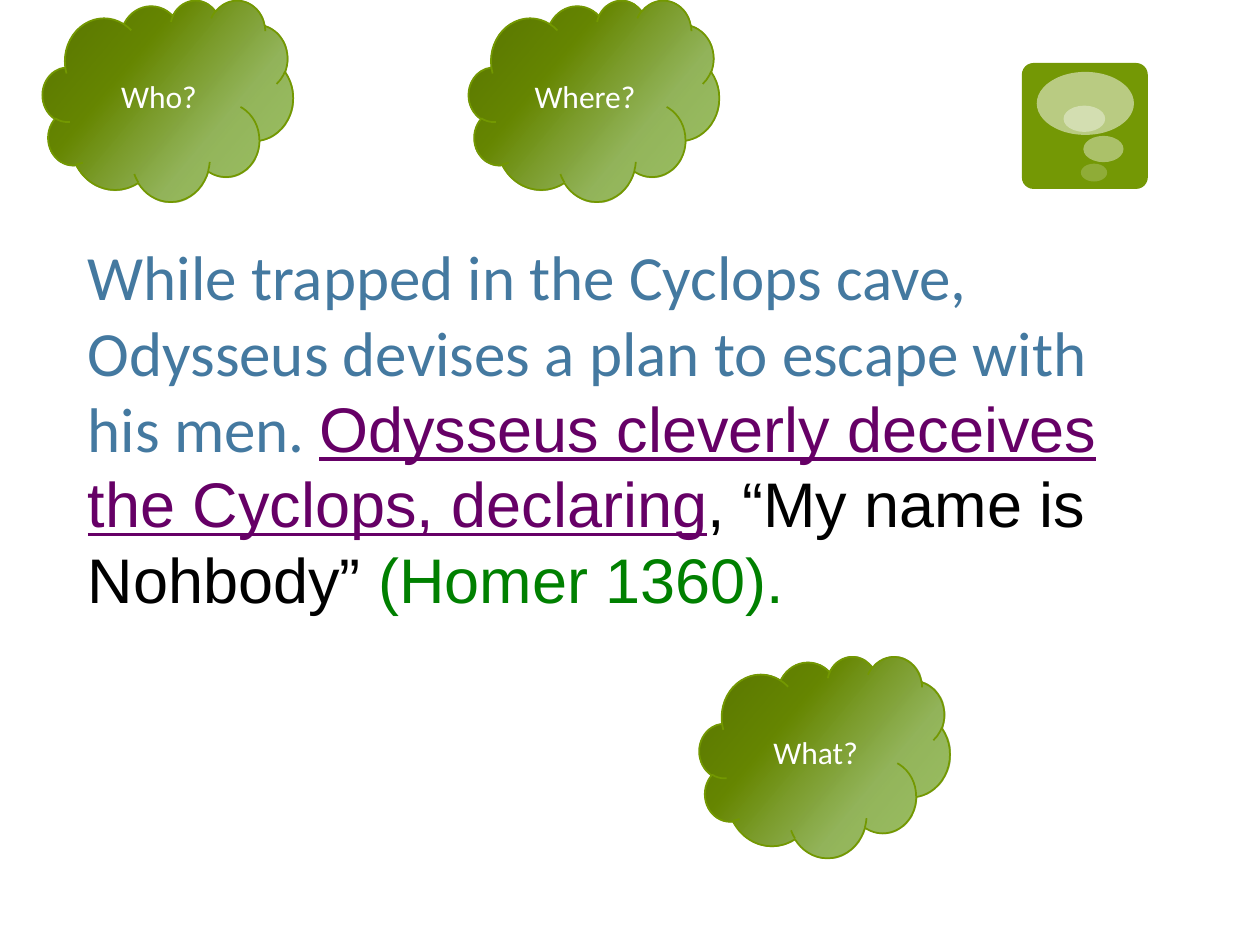
from lxml import etree
from pptx import Presentation
from pptx.dml.color import RGBColor
from pptx.enum.shapes import MSO_SHAPE
from pptx.enum.text import MSO_ANCHOR, PP_ALIGN
from pptx.oxml.ns import qn
from pptx.util import Cm, Pt

CLOUD = MSO_SHAPE.CLOUD
OVAL = MSO_SHAPE.OVAL
ROUNDED = MSO_SHAPE.ROUNDED_RECTANGLE
MIDDLE = MSO_ANCHOR.MIDDLE
CENTER = PP_ALIGN.CENTER

WHITE = RGBColor(0xFF, 0xFF, 0xFF)
BLACK = RGBColor(0, 0, 0)
BLUE = RGBColor(0x44, 0x79, 0xA0)
PURPLE = RGBColor(0x66, 0, 0x66)
GREEN = RGBColor(0, 0x80, 0)
ICON_GREEN = RGBColor(0x74, 0x98, 0x05)
CLOUD_EDGE = RGBColor(0x73, 0x98, 0x01)

# Gradient stops: position, colour, opacity (all in percent)
CLOUD_STOPS = [
    (0, RGBColor(0x8F, 0xB8, 0x4C), 85),
    (33, RGBColor(0x8E, 0xB1, 0x53), 95),
    (67, RGBColor(0x66, 0x86, 0), 100),
    (100, RGBColor(0x58, 0x74, 0), 100),
]

# Icon bubbles: left, top, width, height in cm, opacity in percent
BUBBLES = [
    (20.9, 1.45, 1.96, 1.27, 50),
    (21.84, 2.74, 0.81, 0.53, 40),
    (21.79, 3.3, 0.53, 0.36, 20),
    (21.44, 2.13, 0.84, 0.53, 38),
]

# Clouds: left, top in cm, label
CLOUDS = [(0.86, 0, "Who?"), (9.45, 0, "Where?"), (14.1, 13.23, "What?")]

SENTENCE = [
    ("While trapped in the Cyclops cave, Odysseus devises a plan to escape "
     "with his men. ", dict(name="Calibri"), BLUE),
    ("Odysseus cleverly deceives the Cyclops, declaring",
     dict(name="Arial", underline=True), PURPLE),
    (", “My name is Nohbody” ", dict(name="Arial"), BLACK),
    ("(Homer 1360).", dict(name="Arial"), GREEN),
]


def set_opacity(parent, percent):
    """Add an opacity to the colour inside a solid fill or gradient stop."""
    clr = next(parent.iter(qn("a:srgbClr")))
    etree.SubElement(clr, qn("a:alpha")).set("val", str(percent * 1000))


def add_run(p, text, font, color):
    r = p.add_run()
    r.text = text
    for key, value in font.items():
        setattr(r.font, key, value)
    r.font.color.rgb = color


def add_flat(shapes, kind, box, color):
    sp = shapes.add_shape(kind, *(Cm(v) for v in box))
    sp.shadow.inherit = False
    sp.fill.solid()
    sp.fill.fore_color.rgb = color
    sp.line.fill.background()
    return sp


def add_icon(s):
    shapes = s.shapes.add_group_shape().shapes
    tile = add_flat(shapes, ROUNDED, (20.6, 1.27, 2.54, 2.54), ICON_GREEN)
    tile.adjustments[0] = 0.093
    for *box, opacity in BUBBLES:
        sp = add_flat(shapes, OVAL, box, WHITE)
        set_opacity(sp._element.spPr, opacity)


def fill_gradient(sp):
    sp.fill.gradient()
    sp.fill.gradient_angle = 140
    stops = next(sp._element.spPr.iter(qn("a:gsLst")))
    for old in list(stops):
        stops.remove(old)
    for pos, color, opacity in CLOUD_STOPS:
        gs = etree.SubElement(stops, qn("a:gs"), pos=str(pos * 1000))
        etree.SubElement(gs, qn("a:srgbClr"), val=str(color))
        set_opacity(gs, opacity)


def add_cloud(s, left, top, label):
    sp = s.shapes.add_shape(CLOUD, Cm(left), Cm(top), Cm(5.05), Cm(4.06))
    sp.shadow.inherit = False
    fill_gradient(sp)
    sp.line.color.rgb = CLOUD_EDGE
    sp.line.width = Pt(1)
    tf = sp.text_frame
    tf.vertical_anchor = MIDDLE
    p = tf.paragraphs[0]
    p.alignment = CENTER
    add_run(p, label, dict(name="Calibri", size=Pt(18)), WHITE)


def add_sentence(s):
    tf = s.shapes.add_textbox(Cm(1.52), Cm(4.67), Cm(21.74), Cm(7.95)).text_frame
    tf.word_wrap = True
    for text, font, color in SENTENCE:
        add_run(tf.paragraphs[0], text, dict(font, size=Pt(36)), color)


def main():
    prs = Presentation()
    prs.slide_width, prs.slide_height = Cm(25.4), Cm(19.05)
    s = prs.slides.add_slide(prs.slide_layouts[6])

    # Thought bubble icon
    add_icon(s)

    # Example sentence
    add_sentence(s)

    # Question clouds
    for left, top, label in CLOUDS:
        add_cloud(s, left, top, label)

    prs.save("out.pptx")


if __name__ == "__main__":
    main()
